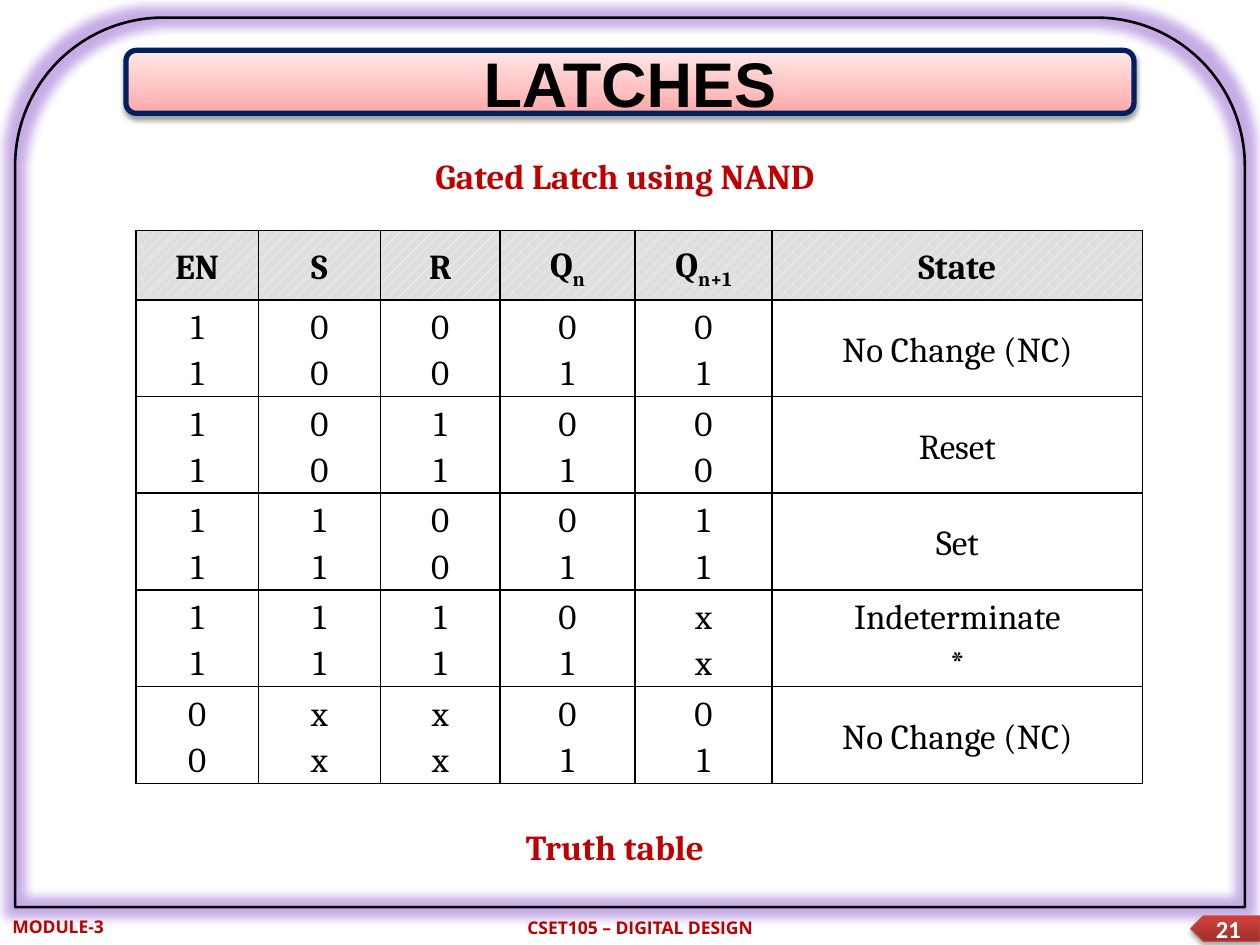
"""Build the truth-table slide for a gated NAND latch."""
from dataclasses import dataclass
from typing import Optional

import lxml.etree
import pptx
import pptx.dml.color
import pptx.enum.dml
import pptx.enum.shapes
import pptx.enum.text
import pptx.oxml.ns
import pptx.util

COLUMNS, ROWS = 100, 75
UNIT = pptx.util.Inches(10) // COLUMNS
SHAPES = pptx.enum.shapes.MSO_SHAPE
ALIGN = pptx.enum.text.PP_ALIGN
ANCHOR = pptx.enum.text.MSO_ANCHOR


@dataclass(frozen=True)
class Style:
    face: str
    size: int
    color: str
    bold: bool = True
    spacing: Optional[float] = None


@dataclass(frozen=True)
class Theme:
    ink: str = "000000"
    glow: str = "7030C0"
    banner_edge: str = "002060"
    badge_edge: str = "BF4C48"
    pattern: tuple = ("FFFFFF", "DFDFDF")
    banner: tuple = ((0, "FFA6A5"), (35, "FFC0BF"), (100, "FFE7E7"))
    badge: tuple = ((0, "9C2F2D"), (80, "CB3E3A"), (100, "CE3B37"))
    title: Style = Style("Arial", 36, "000000")
    caption: Style = Style("Cambria", 20, "C00000")
    footer: Style = Style("Open Sans", 10, "C00000")
    page: Style = Style("Calibri", 14, "FFFFFF")
    header: Style = Style("Cambria", 20, "000000", True, 1.15)
    body: Style = Style("Cambria", 20, "000000", False, 1.15)


@dataclass(frozen=True)
class Box:
    left: float
    top: float
    width: float
    height: float

    def emu(self) -> list:
        return [round(n * UNIT) for n in (self.left, self.top, self.width, self.height)]


@dataclass(frozen=True)
class Label:
    text: str
    box: Box
    style: Style
    anchor: ANCHOR = ANCHOR.TOP
    align: ALIGN = ALIGN.CENTER


@dataclass(frozen=True)
class Panel:
    label: Label
    outline: SHAPES
    stops: tuple
    edge: str
    edge_width: float
    shadow_share: int
    shadow_distance: float
    flipped: bool = False


THEME = Theme()
FRAME = Box(1.2, 1.4, 97.6, 70.6)
PANELS = (
    Panel(Label("LATCHES", Box(10, 4, 80, 5), THEME.title, ANCHOR.MIDDLE),
          SHAPES.ROUNDED_RECTANGLE, THEME.banner, THEME.banner_edge, 3, 38, 1.6),
    Panel(Label("21", Box(94.5, 72.7, 5.5, 2), THEME.page, ANCHOR.MIDDLE),
          SHAPES.PENTAGON, THEME.badge, THEME.badge_edge, 0.75, 35, 1.8, True),
)
LABELS = (
    Label("CSET105 – DIGITAL DESIGN", Box(28.3, 72.3, 45, 2.7), THEME.footer),
    Label("MODULE-3", Box(0, 72.2, 18.3, 2.7), THEME.footer, align=ALIGN.LEFT),
    Label("Gated Latch using NAND", Box(22.5, 11.7, 54.2, 4.4), THEME.caption, ANCHOR.MIDDLE),
    Label("Truth table", Box(21.7, 65, 54.2, 4.4), THEME.caption, ANCHOR.MIDDLE),
)
TABLE_BOX = Box(10.8, 18.3, 80, 43.8)
TABLE_COLUMNS = (9.7, 9.7, 9.5, 10.7, 10.9, 29.4)
HEADER_HEIGHT, BODY_HEIGHT = 5.5, 5.6
HEADINGS = ("EN", "S", "R", "Q_n", "Q_n+1", "State")
STATES = (
    ("11", "00", "00", "01", "01", ("No Change (NC)",)),
    ("11", "00", "11", "01", "00", ("Reset",)),
    ("11", "11", "00", "01", "11", ("Set",)),
    ("11", "11", "11", "01", "xx", ("Indeterminate", "*")),
    ("00", "xx", "xx", "01", "01", ("No Change (NC)",)),
)


def rgb(color: str) -> pptx.dml.color.RGBColor:
    return pptx.dml.color.RGBColor.from_string(color)


def apply(target, formats: dict) -> None:
    for name, value in formats.items():
        setattr(target, name, value)


def node(parent, tag: str, **attributes):
    values = {name: str(value) for name, value in attributes.items()}
    return lxml.etree.SubElement(parent, pptx.oxml.ns.qn(f"a:{tag}"), values)


def add_effect(shape, tag: str, color: str, share: int, **attributes) -> None:
    shape.shadow.inherit = False
    effects = shape._element.spPr.find(pptx.oxml.ns.qn("a:effectLst"))
    tint = node(node(effects, tag, **attributes), "srgbClr", val=color)
    node(tint, "alpha", val=share * 1000)


def set_line(shape, color: str, width: float) -> None:
    shape.line.color.rgb = rgb(color)
    shape.line.width = pptx.util.Pt(width)


def write(frame, lines, style: Style, align: ALIGN = ALIGN.CENTER) -> None:
    for index, line in enumerate(lines):
        paragraph = frame.add_paragraph() if index else frame.paragraphs[0]
        apply(paragraph, {"alignment": align, "line_spacing": style.spacing})
        for part, text in enumerate(line.split("_")):
            run = paragraph.add_run()
            run.text = text
            apply(run.font, {"name": style.face, "size": pptx.util.Pt(style.size),
                             "bold": style.bold})
            run.font.color.rgb = rgb(style.color)
            if part:
                run._r.get_or_add_rPr().set("baseline", "-25000")


def draw_frame(slide) -> None:
    frame = slide.shapes.add_shape(SHAPES.ROUND_2_SAME_RECTANGLE, *FRAME.emu())
    frame.fill.background()
    set_line(frame, THEME.ink, 1.5)
    add_effect(frame, "glow", THEME.glow, 40, rad=pptx.util.Pt(11))


def draw_panel(slide, panel: Panel) -> None:
    label = panel.label
    shape = slide.shapes.add_shape(panel.outline, *label.box.emu())
    shape.fill.gradient()
    shape.fill.gradient_angle = 90
    stops = next(shape._element.spPr.iter(pptx.oxml.ns.qn("a:gsLst")))
    stops.clear()
    for share, color in panel.stops:
        node(node(stops, "gs", pos=share * 1000), "srgbClr", val=color)
    set_line(shape, panel.edge, panel.edge_width)
    add_effect(shape, "outerShdw", THEME.ink, panel.shadow_share,
               blurRad=pptx.util.Pt(3.1), dist=pptx.util.Pt(panel.shadow_distance),
               dir=5400000, rotWithShape=0)
    if panel.flipped:
        shape._element.spPr.xfrm.set("flipH", "1")
    apply(shape.text_frame, {"word_wrap": True, "vertical_anchor": label.anchor})
    write(shape.text_frame, [label.text], label.style)


def draw_label(slide, label: Label) -> None:
    frame = slide.shapes.add_textbox(*label.box.emu()).text_frame
    apply(frame, {"word_wrap": True, "vertical_anchor": label.anchor,
                  "auto_size": pptx.enum.text.MSO_AUTO_SIZE.SHAPE_TO_FIT_TEXT})
    write(frame, [label.text], label.style, label.align)


def draw_cell(cell, lines, style: Style, patterned: bool) -> None:
    inset = pptx.util.Inches(0.07)
    apply(cell, {"vertical_anchor": ANCHOR.MIDDLE, "margin_left": inset,
                 "margin_right": inset, "margin_top": 0, "margin_bottom": 0})
    properties = cell._tc.get_or_add_tcPr()
    for side in ("lnL", "lnR", "lnT", "lnB"):
        border = node(properties, side, w=pptx.util.Pt(1))
        node(node(border, "solidFill"), "srgbClr", val=THEME.ink)
    if patterned:
        cell.fill.patterned()
        cell.fill.pattern = pptx.enum.dml.MSO_PATTERN.PERCENT_20
        cell.fill.fore_color.rgb, cell.fill.back_color.rgb = map(rgb, THEME.pattern)
    else:
        cell.fill.background()
    write(cell.text_frame, lines, style)


def draw_table(slide) -> None:
    holder = slide.shapes.add_table(len(STATES) + 1, len(HEADINGS), *TABLE_BOX.emu())
    table = holder.table
    apply(table, {"first_row": False, "horz_banding": False})
    for column, width in zip(table.columns, TABLE_COLUMNS):
        column.width = round(width * UNIT)
    content = (tuple((heading,) for heading in HEADINGS),) + STATES
    for index, cells in enumerate(content):
        is_header = index == 0
        table.rows[index].height = round((HEADER_HEIGHT if is_header else BODY_HEIGHT) * UNIT)
        for cell, lines in zip(table.rows[index].cells, cells):
            draw_cell(cell, lines, THEME.header if is_header else THEME.body, is_header)
    holder.height = TABLE_BOX.emu()[3]


def main() -> None:
    deck = pptx.Presentation()
    apply(deck, {"slide_width": COLUMNS * UNIT, "slide_height": ROWS * UNIT})
    slide = deck.slides.add_slide(deck.slide_layouts[6])
    draw_frame(slide)
    for panel in PANELS:
        draw_panel(slide, panel)
    for label in LABELS:
        draw_label(slide, label)
    draw_table(slide)
    deck.save("out.pptx")


if __name__ == "__main__":
    main()
